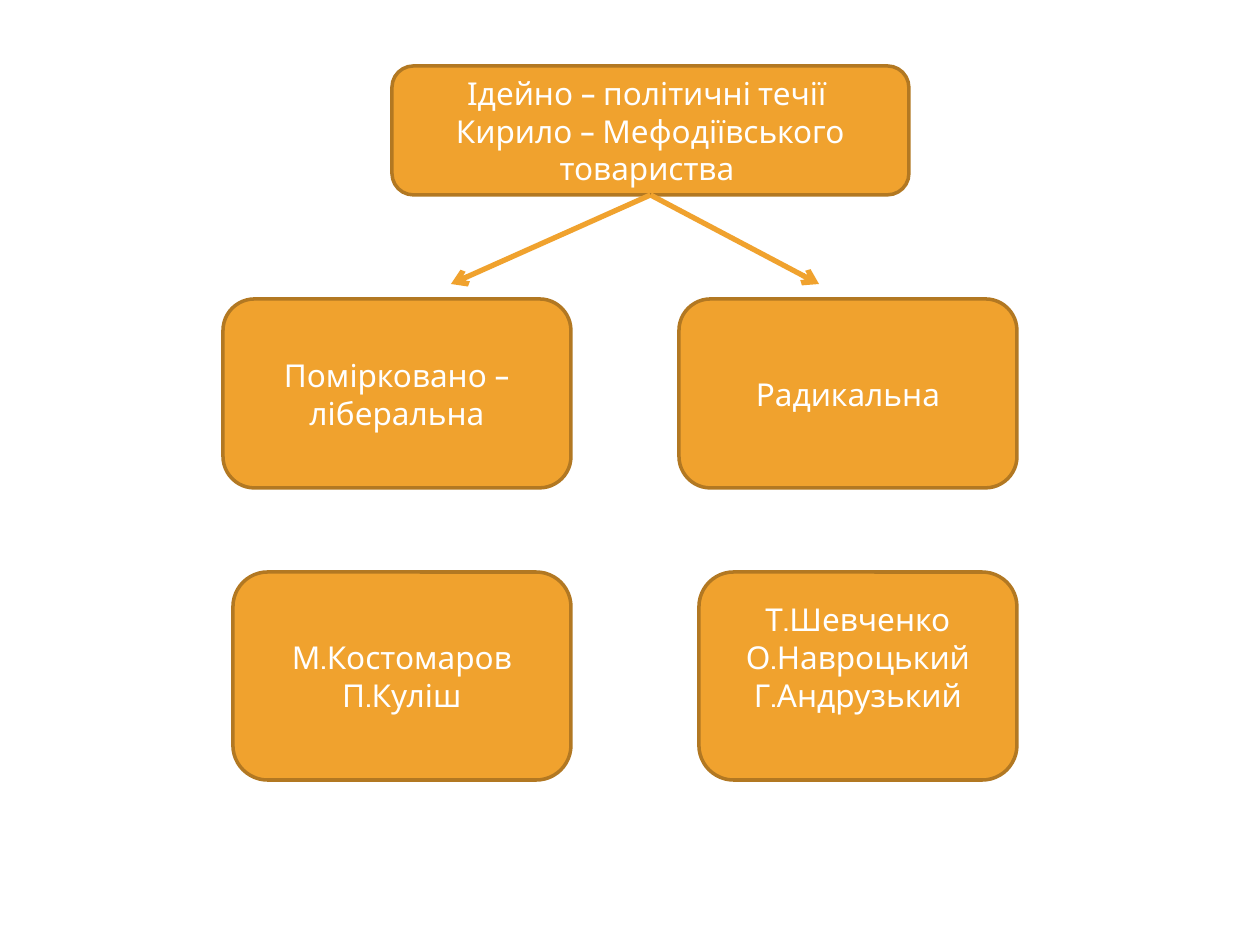
from lxml.etree import SubElement
from pptx import Presentation
from pptx.dml.color import RGBColor
from pptx.enum.shapes import MSO_CONNECTOR as CONN, MSO_SHAPE as SHAPE
from pptx.enum.text import MSO_ANCHOR as ANCHOR, PP_ALIGN as ALIGN
from pptx.oxml.ns import qn
from pptx.util import Pt

PX = 914400 / 126
ORANGE = RGBColor(0xF0, 0xA2, 0x2E)
BROWN = RGBColor(0xB2, 0x78, 0x22)
WHITE = RGBColor(0xFF, 0xFF, 0xFF)


def px(n):
    return round(n * PX)


def write(tf, text, size=18, color=WHITE, font="Cabin", bottom=6):
    tf.word_wrap = True
    tf.vertical_anchor = ANCHOR.MIDDLE
    tf.margin_bottom = px(bottom)
    for i, line in enumerate(text.split("\n")):
        p = tf.add_paragraph() if i else tf.paragraphs[0]
        p.alignment = ALIGN.CENTER
        r = p.add_run()
        r.text = line
        r.font.size = Pt(size)
        r.font.name = font
        r.font.color.rgb = color


def card(s, box, text, **fmt):
    sp = s.shapes.add_shape(SHAPE.ROUNDED_RECTANGLE, *map(px, box))
    sp.shadow.inherit = False
    sp.fill.solid()
    sp.fill.fore_color.rgb = ORANGE
    sp.line.color.rgb = BROWN
    sp.line.width = Pt(2)
    write(sp.text_frame, text, **fmt)
    return sp


def arrow(s, source, x, y):
    """Arrow from the bottom middle of the source card to a point."""
    c = s.shapes.add_connector(CONN.STRAIGHT, 0, 0, px(x), px(y))
    c.begin_connect(source, 2)
    c.line.color.rgb = ORANGE
    c.line.width = Pt(3)
    SubElement(c.line._get_or_add_ln(), qn("a:tailEnd"), type="arrow")
    SubElement(c._element.spPr, qn("a:effectLst"))


def branch(s, box, name, people, indent, **fmt):
    """Current on top, its members below, aligned to the right edge."""
    x, y, w, h = box
    card(s, (x, y, w, 189), name)
    card(s, (x + indent, y + h - 208, w - indent, 208), people, **fmt)


def main():
    prs = Presentation()
    prs.slide_width, prs.slide_height = px(1260), px(945)
    s = prs.slides.add_slide(prs.slide_layouts[6])

    # Heading
    heading = card(s, (392, 66, 517, 129),
                   "Ідейно – політичні течії \nКирило – Мефодіївського товариства ")

    # Two currents with their members
    branch(s, (223, 299, 348, 481), "Помірковано – ліберальна",
           "М.Костомаров\nП.Куліш", indent=10)
    branch(s, (679, 299, 338, 481), "Радикальна",
           "Т.Шевченко\nО.Навроцький\nГ.Андрузький", indent=20, bottom=44)

    # Arrows to the currents
    for x in (451, 819):
        arrow(s, heading, x, 284)

    prs.save("out.pptx")


if __name__ == "__main__":
    main()
